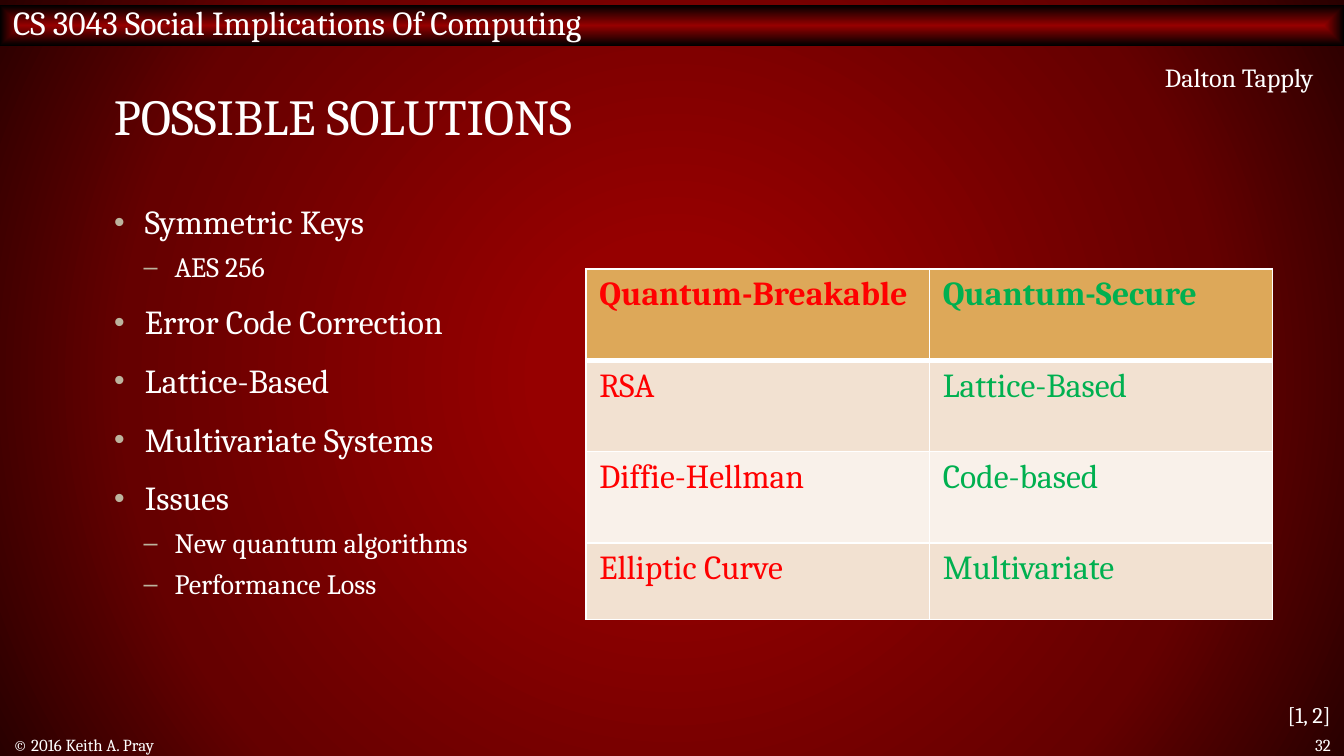
from dataclasses import dataclass

from lxml.etree import SubElement
from pptx import Presentation
from pptx.dml.color import RGBColor
from pptx.enum.shapes import MSO_SHAPE as Shape
from pptx.enum.text import MSO_ANCHOR as Anchor, PP_ALIGN as Align
from pptx.oxml import parse_xml
from pptx.oxml.ns import nsdecls, qn
from pptx.util import Inches, Pt

FONT = "Cambria"
COLORS = {
    "white": "FFFFFF", "bullet": "BCB49E", "breakable": "FF0000", "secure": "00B050",
    "header": "DDA859", "odd_row": "F2E1D1", "even_row": "F9F1EA",
    "bright": "960000", "middle": "650000", "dark": "290000", "black": "000000",
}


@dataclass
class Label:
    text: str
    at: tuple[float, float, float, float]
    size: float
    align: Align = Align.LEFT
    anchor: Anchor = Anchor.MIDDLE
    line_spacing: float = 1.0


@dataclass
class Level:
    mark: str
    size: float
    indent: float
    space_before: float


LEVELS = [Level("•", 18, 0.23, 12), Level("–", 15, 0.45, 6)]
LABELS = [
    Label("POSSIBLE SOLUTIONS", (0.75, 0.4, 8.5, 1), 27, line_spacing=0.8),
    Label("© 2016 Keith A. Pray", (0, 5.46, 6.08, 0.16), 9),
    Label("32", (9.32, 5.46, 0.68, 0.16), 9, Align.RIGHT),
    Label("Dalton Tapply", (7.49, 0.41, 2.38, 0.34), 14, Align.RIGHT, Anchor.TOP),
    Label("[1, 2]", (0, 5.17, 10, 0.3), 12, Align.RIGHT, Anchor.TOP),
]
SOLUTIONS = [
    (0, "Symmetric Keys"), (1, "AES 256"), (0, "Error Code Correction"),
    (0, "Lattice-Based"), (0, "Multivariate Systems"), (0, "Issues"),
    (1, "New quantum algorithms"), (1, "Performance Loss"),
]
SCHEMES = [
    ("Quantum-Breakable", "Quantum-Secure"), ("RSA", "Lattice-Based"),
    ("Diffie-Hellman", "Code-based"), ("Elliptic Curve", "Multivariate"),
]
ROW_HEIGHTS = [0.68, 0.68, 0.68, 0.57]


def rgb(name: str) -> RGBColor:
    return RGBColor.from_string(COLORS[name])


def write(para, text: str, *, size: float, color: str = "white", bold: bool = False,
          align: Align = Align.LEFT, line_spacing: float = 1.0) -> None:
    para.alignment = align
    para.line_spacing = line_spacing
    span = para.add_run()
    span.text = text
    span.font.name = FONT
    span.font.size = Pt(size)
    span.font.bold = bold
    span.font.color.rgb = rgb(color)


def set_radial_fill(fill, holder, kind: str, stops: list[tuple[int, str]]) -> None:
    fill.solid()
    stop_xml = "".join(
        f'<a:gs pos="{place * 1000}"><a:srgbClr val="{COLORS[color]}"/></a:gs>'
        for place, color in stops
    )
    gradient = parse_xml(
        f'<a:gradFill {nsdecls("a")} rotWithShape="1"><a:gsLst>{stop_xml}</a:gsLst>'
        f'<a:path path="{kind}"><a:fillToRect l="50000" t="50000" r="50000" b="50000"/>'
        "</a:path></a:gradFill>"
    )
    solid = holder.find(qn("a:solidFill"))
    holder.replace(solid, gradient)


def add_text_box(page, at: tuple[float, float, float, float], anchor: Anchor):
    box = page.shapes.add_textbox(*map(Inches, at))
    box.text_frame.word_wrap = True
    box.text_frame.vertical_anchor = anchor
    return box.text_frame


def add_label(page, label: Label) -> None:
    frame = add_text_box(page, label.at, label.anchor)
    write(frame.paragraphs[0], label.text, size=label.size, align=label.align,
          line_spacing=label.line_spacing)


def add_course_bar(page) -> None:
    bar = page.shapes.add_shape(Shape.RECTANGLE, *map(Inches, (0, 0.04, 10, 0.3)))
    bar.shadow.inherit = False
    bar.line.fill.background()
    set_radial_fill(bar.fill, bar.fill._xPr, "shape", [(0, "bright"), (100, "black")])
    frame = bar.text_frame
    frame.vertical_anchor = Anchor.MIDDLE
    frame.margin_top, frame.margin_bottom = 0, Inches(0.05)
    write(frame.paragraphs[0], "CS 3043 Social Implications Of Computing", size=18)


def add_bullet(para, level: Level) -> None:
    props = para._p.get_or_add_pPr()
    props.set("marL", str(Inches(level.indent)))
    props.set("indent", str(-Inches(0.23)))
    color = SubElement(props, qn("a:buClr"))
    SubElement(color, qn("a:srgbClr"), val=COLORS["bullet"])
    SubElement(props, qn("a:buSzPct"), val="90000")
    SubElement(props, qn("a:buFont"), typeface="Arial")
    SubElement(props, qn("a:buChar"), char=level.mark)


def add_solutions(page) -> None:
    frame = add_text_box(page, (0.75, 1.48, 4.08, 3.67), Anchor.TOP)
    for index, (depth, text) in enumerate(SOLUTIONS):
        para = frame.add_paragraph() if index else frame.paragraphs[0]
        level = LEVELS[depth]
        add_bullet(para, level)
        para.level = depth
        para.space_before = Pt(level.space_before if index else 0)
        write(para, text, size=level.size, line_spacing=0.9)


def set_borders(cell, widths: dict[str, float]) -> None:
    props = cell._tc.get_or_add_tcPr()
    for index, (side, width) in enumerate(widths.items()):
        props.insert(index, parse_xml(
            f'<a:ln{side} {nsdecls("a")} w="{Pt(width)}"><a:solidFill>'
            f'<a:srgbClr val="{COLORS["white"]}"/></a:solidFill></a:ln{side}>'
        ))


def add_scheme_table(page) -> None:
    area = map(Inches, (4.36, 2, 5.11, sum(ROW_HEIGHTS)))
    table = page.shapes.add_table(len(SCHEMES), 2, *area).table
    for row, height in zip(table.rows, ROW_HEIGHTS):
        row.height = Inches(height)
    for row, names in enumerate(SCHEMES):
        fill = "header" if row == 0 else "odd_row" if row % 2 else "even_row"
        borders = {"L": 1, "R": 1, "T": 3 if row == 1 else 1, "B": 3 if row == 0 else 1}
        for column, (name, color) in enumerate(zip(names, ("breakable", "secure"))):
            cell = table.cell(row, column)
            cell.fill.solid()
            cell.fill.fore_color.rgb = rgb(fill)
            set_borders(cell, borders)
            write(cell.text_frame.paragraphs[0], name, size=18, color=color, bold=row == 0)


def main() -> None:
    deck = Presentation()
    deck.slide_width, deck.slide_height = Inches(10), Inches(10 * 9 / 16)
    page = deck.slides.add_slide(deck.slide_layouts[6])
    backdrop = page.background.fill
    set_radial_fill(backdrop, backdrop._xPr, "circle",
                    [(17, "bright"), (71, "middle"), (100, "dark")])
    add_course_bar(page)
    for label in LABELS:
        add_label(page, label)
    add_solutions(page)
    add_scheme_table(page)
    deck.save("out.pptx")


if __name__ == "__main__":
    main()
